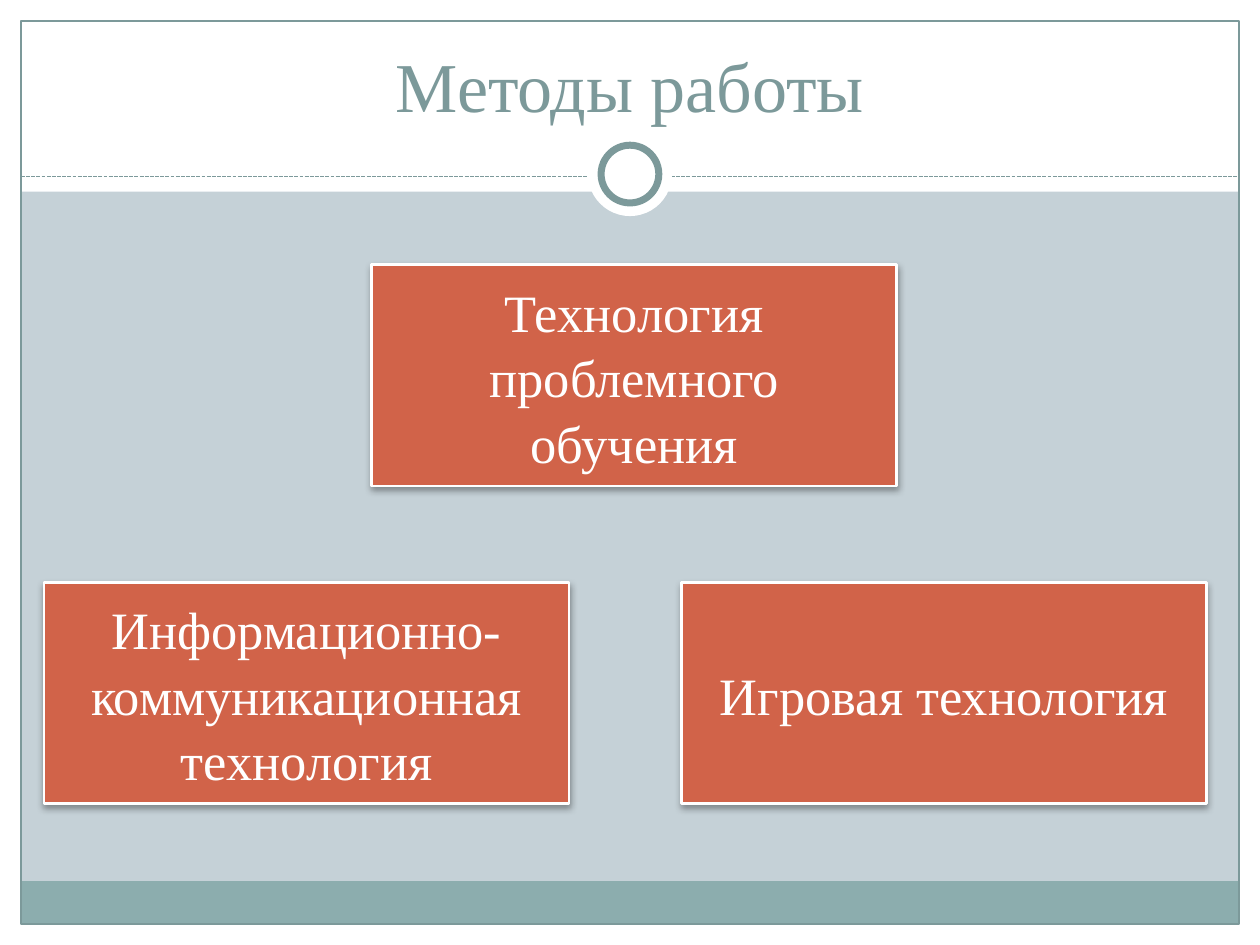
from lxml.etree import SubElement
from pptx import Presentation
from pptx.dml.color import RGBColor
from pptx.enum.dml import MSO_LINE
from pptx.enum.shapes import MSO_CONNECTOR as Connector, MSO_SHAPE as Shape
from pptx.enum.text import MSO_ANCHOR as Anchor, PP_ALIGN as Align
from pptx.oxml.ns import qn
from pptx.util import Pt

WHITE = RGBColor(0xFF, 0xFF, 0xFF)
BLACK = RGBColor(0, 0, 0)
BACKDROP = RGBColor(0xC5, 0xD1, 0xD7)
TEAL = RGBColor(0x7C, 0x99, 0x9A)
FOOTER = RGBColor(0x8C, 0xAD, 0xAE)
BRICK = RGBColor(0xD1, 0x63, 0x49)
FONT = "Times New Roman"
WIDTH, HEIGHT = 720, 540
MARGIN = 12


def add_plain(slide, kind, box, fill=None, line=None, weight=0.75):
    """Add a preset shape without shadow, with optional fill and line."""
    shape = slide.shapes.add_shape(kind, *map(Pt, box))
    shape.shadow.inherit = False
    if fill is None:
        shape.fill.background()
    else:
        shape.fill.solid()
        shape.fill.fore_color.rgb = fill
    if line is None:
        shape.line.fill.background()
    else:
        shape.line.color.rgb = line
        shape.line.width = Pt(weight)
    return shape


def add_soft_shadow(shape):
    """Give a shape a soft black shadow that falls straight down."""
    effects = shape._element.spPr.find(qn("a:effectLst"))
    shadow = SubElement(effects, qn("a:outerShdw"), blurRad=str(Pt(4)), dist=str(Pt(2)),
                        dir="5400000", rotWithShape="0")
    colour = SubElement(shadow, qn("a:srgbClr"), val=str(BLACK))
    SubElement(colour, qn("a:alpha"), val="35000")


def write_centred(frame, text, size, colour):
    """Write centred text in the middle of a text frame."""
    frame.text = text
    frame.word_wrap = True
    frame.vertical_anchor = Anchor.MIDDLE
    for paragraph in frame.paragraphs:
        paragraph.alignment = Align.CENTER
        for run in paragraph.runs:
            run.font.name = FONT
            run.font.size = Pt(size)
            run.font.color.rgb = colour


def draw_frame(slide, left, top, width, height):
    """Draw the white borders, the footer band and the outline."""
    inner_width, inner_height = width - 2 * MARGIN, height - 2 * MARGIN
    right, bottom = left + width - MARGIN, top + height - MARGIN
    for border in ((left, bottom, width, MARGIN), (left, top, width, 109.5),
                   (left, top, MARGIN, height), (right, top, MARGIN, height)):
        add_plain(slide, Shape.RECTANGLE, border, WHITE)
    add_plain(slide, Shape.RECTANGLE, (left + MARGIN, bottom - 24.5, inner_width, 24.5), FOOTER)
    add_plain(slide, Shape.RECTANGLE, (left + MARGIN, top + MARGIN, inner_width, inner_height),
              line=TEAL)


def draw_divider(slide, left, top, width):
    """Draw the dashed rule with the ring at its centre."""
    rule = slide.shapes.add_connector(Connector.STRAIGHT, Pt(left), Pt(top),
                                      Pt(left + width), Pt(top))
    rule.line.color.rgb = TEAL
    rule.line.width = Pt(0.75)
    rule.line.dash_style = MSO_LINE.SQUARE_DOT
    SubElement(rule._element.spPr, qn("a:effectLst"))
    centre_x, centre_y = left + width / 2, top - 1.3
    for diameter, outline in ((48, None), (33, TEAL)):
        ring = (centre_x - diameter / 2, centre_y - diameter / 2, diameter, diameter)
        add_plain(slide, Shape.OVAL, ring, WHITE, outline, 4)


def place_title(slide, left, top, width, height, text):
    """Fill the title placeholder and bring it in front of the frame."""
    title = slide.shapes.title
    title.left, title.top, title.width, title.height = map(Pt, (left, top, width, height))
    write_centred(title.text_frame, text, 40, TEAL)
    title._element.getparent().append(title._element)


def draw_methods(slide, left, top, width, height):
    """Draw the three method cards, one above and two below."""
    card_width, card_height = 300, 126.5
    right, bottom = left + width - card_width, top + height - card_height
    cards = (
        (left, bottom, "Информационно-коммуникационная\nтехнология"),
        (left + 187.2, top, "Технология проблемного обучения"),
        (right, bottom, "Игровая технология"),
    )
    for card_left, card_top, method in cards:
        card = add_plain(slide, Shape.RECTANGLE, (card_left, card_top, card_width, card_height),
                         BRICK, WHITE, 1.57)
        add_soft_shadow(card)
        write_centred(card.text_frame, method, 30, WHITE)
        for paragraph in card.text_frame.paragraphs:
            paragraph.line_spacing = 1.04


def main():
    """Build the slide and save it."""
    deck = Presentation()
    deck.slide_width, deck.slide_height = Pt(WIDTH), Pt(HEIGHT)
    slide = deck.slides.add_slide(deck.slide_layouts[5])
    slide.background.fill.solid()
    slide.background.fill.fore_color.rgb = BACKDROP
    draw_frame(slide, 0, 0, WIDTH, HEIGHT)
    draw_divider(slide, MARGIN, 100.8, WIDTH - 2 * MARGIN)
    place_title(slide, 24, 18, 672, 60, "Методы работы")
    draw_methods(slide, 25.2, 151.2, 664.3, 308)
    deck.save("out.pptx")


if __name__ == "__main__":
    main()
